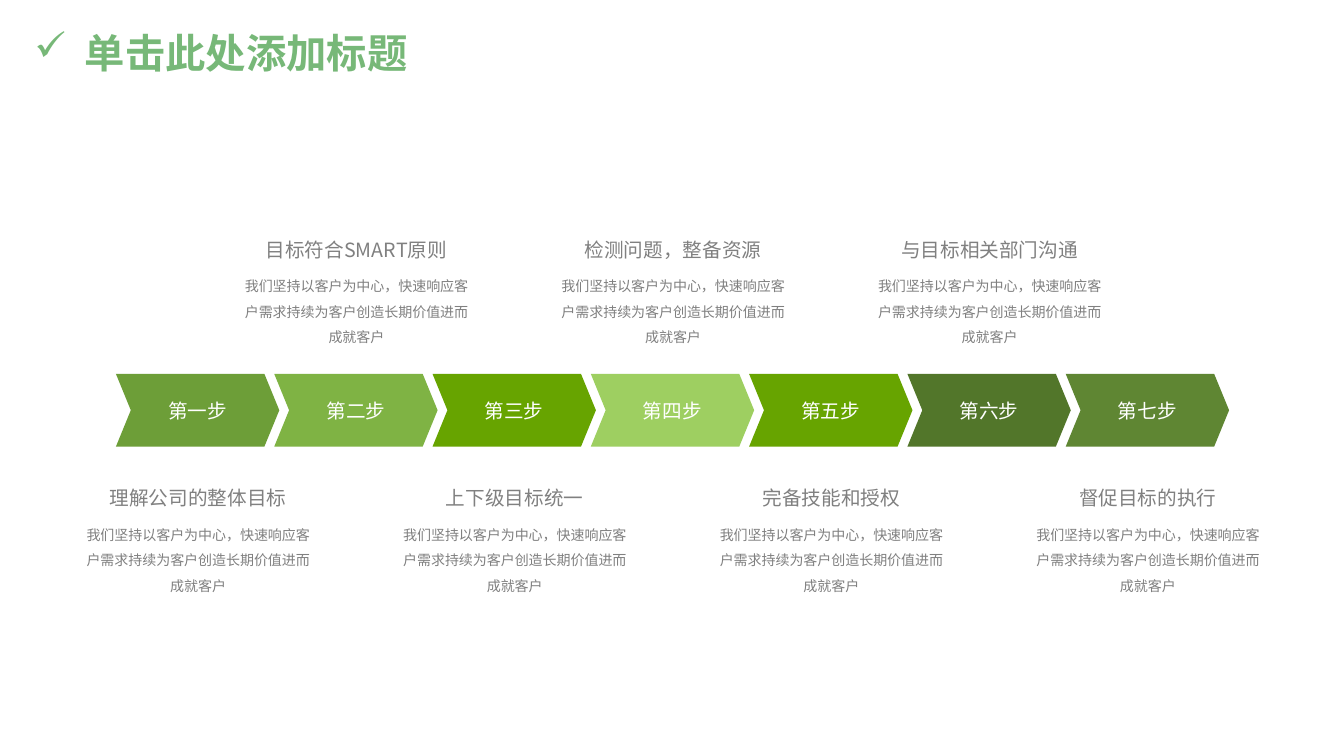
from dataclasses import dataclass

from lxml import etree
from pptx import Presentation
from pptx.dml.color import RGBColor
from pptx.enum.shapes import MSO_SHAPE
from pptx.enum.text import MSO_ANCHOR, MSO_AUTO_SIZE, PP_ALIGN
from pptx.oxml.ns import qn
from pptx.util import Inches, Pt

CHEVRON = MSO_SHAPE.CHEVRON
MIDDLE = MSO_ANCHOR.MIDDLE
NO_FIT, GROW = MSO_AUTO_SIZE.NONE, MSO_AUTO_SIZE.SHAPE_TO_FIT_TEXT
LEFT, CENTER = PP_ALIGN.LEFT, PP_ALIGN.CENTER

TITLE = "单击此处添加标题"
DETAIL = "我们坚持以客户为中心，快速响应客户需求持续为客户创造长期价值进而成就客户"
STEPS = [
    ("第一步", "理解公司的整体目标", "6D9E38"),
    ("第二步", "目标符合SMART原则", "7FB344"),
    ("第三步", "上下级目标统一", "67A400"),
    ("第四步", "检测问题，整备资源", "9ECF61"),
    ("第五步", "完备技能和授权", "67A400"),
    ("第六步", "与目标相关部门沟通", "52762A"),
    ("第七步", "督促目标的执行", "5F8633"),
]


@dataclass
class Theme:
    title_font: str = "Montserrat"
    font: str = "Noto Sans CJK SC"
    title: str = "77B878"
    label: str = "FFFFFF"
    caption: str = "808080"
    title_size: float = 28.8
    head_size: float = 14
    detail_size: float = 10


THEME = Theme()
PITCH = 1.57
STEP_LEFT, STEP_TOP, STEP_W, STEP_H = 1.15, 3.71, 1.62, 0.72
CAPTION_LEFT, CAPTION_W, CAPTION_H = 0.76, 2.41, 1.3
CAPTION_TOPS = (4.66, 2.19)


def add_run(p, text, size, color, font=THEME.font, bold=False):
    r = p.add_run()
    r.text = text
    r.font.size = Pt(size)
    r.font.bold = bold
    r.font.name = font
    r.font.color.rgb = RGBColor.from_string(color)
    ea = etree.SubElement(r.font._element, qn("a:ea"))
    ea.set("typeface", THEME.font)


def add_title(s):
    sp = s.shapes.title
    sp.left, sp.top = Inches(0.24), Inches(0.29)
    sp.width, sp.height = Inches(11.5), Inches(0.51)
    tf = sp.text_frame
    tf.word_wrap = True
    tf.auto_size = NO_FIT
    tf.vertical_anchor = MIDDLE
    p = tf.paragraphs[0]
    p.alignment = LEFT
    p.line_spacing = 0.9
    pPr = p._p.get_or_add_pPr()
    pPr.set("marL", str(Inches(0.5)))
    pPr.set("indent", str(Inches(-0.5)))
    etree.SubElement(pPr, qn("a:buChar")).set("char", "✓")
    add_run(p, TITLE, THEME.title_size, THEME.title, THEME.title_font, True)


def add_step(s, left, label, color):
    sp = s.shapes.add_shape(CHEVRON, Inches(left), Inches(STEP_TOP), Inches(STEP_W), Inches(STEP_H))
    sp.adjustments[0] = 0.205
    sp.shadow.inherit = False
    sp.fill.solid()
    sp.fill.fore_color.rgb = RGBColor.from_string(color)
    sp.line.fill.background()
    tf = sp.text_frame
    tf.vertical_anchor = MIDDLE
    p = tf.paragraphs[0]
    p.alignment = CENTER
    add_run(p, label, THEME.head_size, THEME.label)


def add_caption(s, left, top, heading):
    sp = s.shapes.add_textbox(Inches(left), Inches(top), Inches(CAPTION_W), Inches(CAPTION_H))
    tf = sp.text_frame
    tf.word_wrap = True
    tf.auto_size = GROW
    lines = ((heading, THEME.head_size), (DETAIL, THEME.detail_size))
    for i, (text, size) in enumerate(lines):
        p = tf.add_paragraph() if i else tf.paragraphs[0]
        p.alignment = CENTER
        p.line_spacing = 1.5
        p.space_after = Pt(6)
        add_run(p, text, size, THEME.caption)


def main():
    prs = Presentation()
    prs.slide_width, prs.slide_height = Inches(13.33), Inches(7.5)
    s = prs.slides.add_slide(prs.slide_layouts[5])
    add_title(s)
    for i, (label, heading, color) in enumerate(STEPS):
        add_step(s, STEP_LEFT + i * PITCH, label, color)
        add_caption(s, CAPTION_LEFT + i * PITCH, CAPTION_TOPS[i % 2], heading)
    prs.save("out.pptx")


if __name__ == "__main__":
    main()
